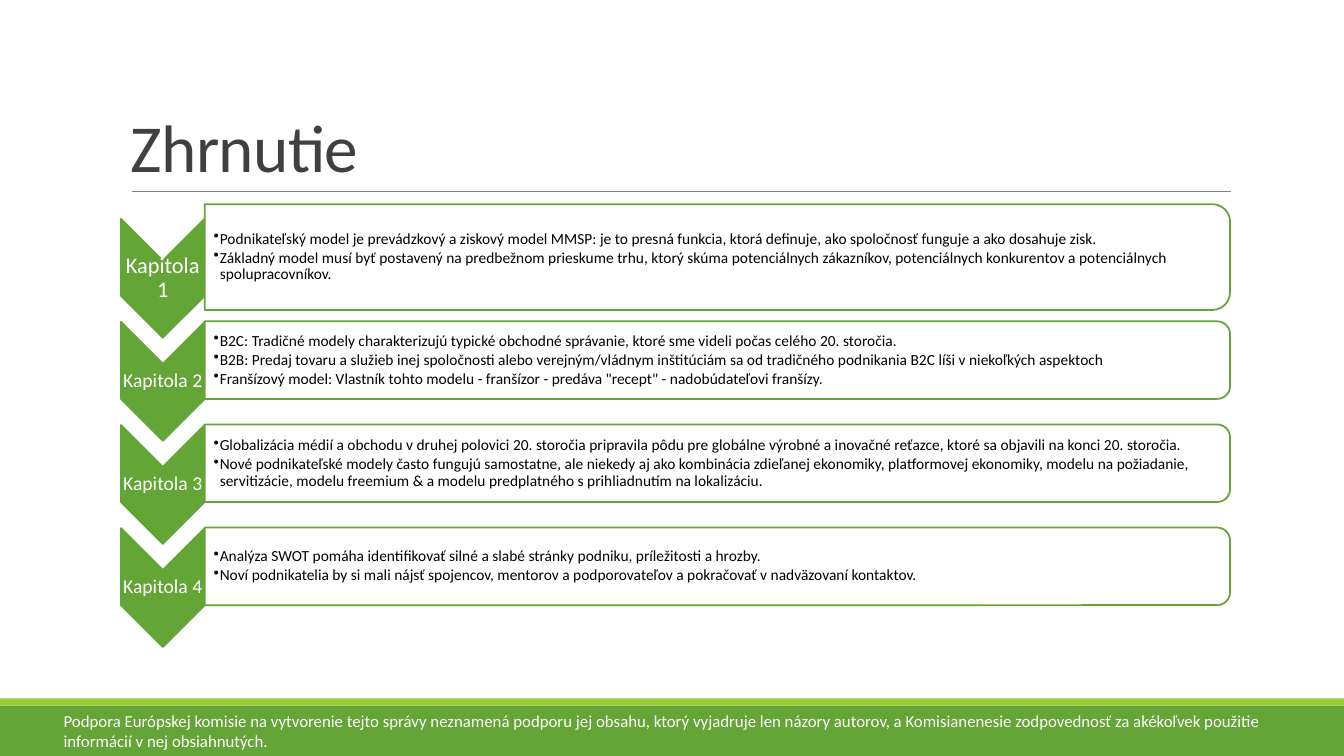
from lxml import etree
from pptx import Presentation
from pptx.dml.color import RGBColor
from pptx.enum.shapes import MSO_CONNECTOR, MSO_SHAPE
from pptx.enum.text import MSO_ANCHOR, PP_ALIGN
from pptx.oxml.ns import qn
from pptx.util import Inches, Pt

GREEN = RGBColor(0x63, 0xA5, 0x37)
LIME = RGBColor(0x99, 0xCB, 0x38)
GRAY = RGBColor(0x80, 0x80, 0x80)
DARK = RGBColor(0x40, 0x40, 0x40)
WHITE = RGBColor(0xFF, 0xFF, 0xFF)
BLACK = RGBColor(0, 0, 0)
RECT, CHEVRON, ROUND = (
    MSO_SHAPE.RECTANGLE, MSO_SHAPE.CHEVRON, MSO_SHAPE.ROUND_2_SAME_RECTANGLE)
STRAIGHT = MSO_CONNECTOR.STRAIGHT
TOP, MIDDLE, BOTTOM = MSO_ANCHOR.TOP, MSO_ANCHOR.MIDDLE, MSO_ANCHOR.BOTTOM
LEFT, CENTER = PP_ALIGN.LEFT, PP_ALIGN.CENTER

WIDTH, HEIGHT = 13.33, 7.5
PITCH = 1.023
TAB = 0.83
ARROW = 1.18
DROP = 0.21

CHAPTERS = [
    ("Kapitola 1", 16, 1.05, [
        "Podnikateľský model je prevádzkový a ziskový model MMSP: je to presná funkcia, "
        "ktorá definuje, ako spoločnosť funguje a ako dosahuje zisk.",
        "Základný model musí byť postavený na predbežnom prieskume trhu, ktorý skúma "
        "potenciálnych zákazníkov, potenciálnych konkurentov a potenciálnych "
        "spolupracovníkov."]),
    ("Kapitola 2", 14, 0.77, [
        "B2C: Tradičné modely charakterizujú typické obchodné správanie, ktoré sme videli "
        "počas celého 20. storočia.",
        "B2B: Predaj tovaru a služieb inej spoločnosti alebo verejným/vládnym inštitúciám "
        "sa od tradičného podnikania B2C líši v niekoľkých aspektoch",
        "Franšízový model: Vlastník tohto modelu - franšízor - predáva \"recept\" - "
        "nadobúdateľovi franšízy."]),
    ("Kapitola 3", 14, 0.77, [
        "Globalizácia médií a obchodu v druhej polovici 20. storočia pripravila pôdu pre "
        "globálne výrobné a inovačné reťazce, ktoré sa objavili na konci 20. storočia.",
        "Nové podnikateľské modely často fungujú samostatne, ale niekedy aj ako kombinácia "
        "zdieľanej ekonomiky, platformovej ekonomiky, modelu na požiadanie, servitizácie, "
        "modelu freemium & a modelu predplatného s prihliadnutím na lokalizáciu."]),
    ("Kapitola 4", 14, 0.77, [
        "Analýza SWOT pomáha identifikovať silné a slabé stránky podniku, príležitosti "
        "a hrozby.",
        "Noví podnikatelia by si mali nájsť spojencov, mentorov a podporovateľov "
        "a pokračovať v nadväzovaní kontaktov."]),
]
NOTICE = (
    "Podpora Európskej komisie na vytvorenie tejto správy neznamená podporu jej obsahu, "
    "ktorý vyjadruje len názory autorov, a Komisianenesie zodpovednosť za akékoľvek "
    "použitie informácií v nej obsiahnutých.")


def add_form(slide, kind, box, fill, line=None, turn=0):
    """Add a filled preset shape."""
    form = slide.shapes.add_shape(kind, *map(Inches, box))
    form.shadow.inherit = False
    form.rotation = turn
    form.fill.solid()
    form.fill.fore_color.rgb = fill
    if line is None:
        form.line.fill.background()
    else:
        form.line.color.rgb = line
        form.line.width = Pt(1.25)
    return form


def add_text(slide, box, lines, size, color, anchor=MIDDLE, align=LEFT,
             space=0.9, pads=(0.01, 0.01, 0.01, 0.01)):
    """Add a wrapped text box and return its paragraphs."""
    frame = slide.shapes.add_textbox(*map(Inches, box)).text_frame
    frame.word_wrap = True
    frame.vertical_anchor = anchor
    (frame.margin_left, frame.margin_top,
     frame.margin_right, frame.margin_bottom) = map(Inches, pads)
    frame.text = "\n".join(lines)
    for par in frame.paragraphs:
        par.alignment = align
        par.line_spacing = space
        par.font.name = "Calibri"
        par.font.size = Pt(size)
        par.font.color.rgb = color
    return frame.paragraphs


def add_bullet(par):
    """Give a paragraph a hanging bullet."""
    par.space_after = Pt(1.65)
    props = par._p.get_or_add_pPr()
    props.set("marL", str(Inches(0.06)))
    props.set("indent", str(-Inches(0.06)))
    mark = etree.Element(qn("a:buChar"), char="•")
    props.find(qn("a:defRPr")).addprevious(mark)


def add_title(slide, left, top, width, height):
    """Draw the heading and the rule below it."""
    pars = add_text(slide, (left, top, width, height), ["Zhrnutie"], 48, DARK,
                    BOTTOM, space=0.85, pads=(0.1, 0.05, 0.1, 0.05))
    pars[0].runs[0]._r.get_or_add_rPr().set("spc", "-50")
    base = Inches(top + height)
    rule = slide.shapes.add_connector(
        STRAIGHT, Inches(left + 0.11), base, Inches(left + width + 0.01), base)
    rule.line.color.rgb = GRAY
    rule.line.width = Pt(0.5)
    etree.SubElement(rule._element.spPr, qn("a:effectLst"))


def add_row(slide, left, mid, width, chapter):
    """Draw one chapter: a down chevron and its panel of points."""
    name, size, tall, points = chapter
    low = mid + DROP
    add_form(slide, CHEVRON,
             (left + (TAB - ARROW) / 2, low - TAB / 2, ARROW, TAB), GREEN, GREEN, 90)
    add_text(slide, (left, low - 0.175, TAB, 0.35), [name], size, WHITE, align=CENTER)
    start, wide = left + TAB, width - TAB
    add_form(slide, ROUND,
             (start + (wide - tall) / 2, mid - wide / 2, tall, wide), WHITE, GREEN, 90)
    inner = tall - 0.09
    pars = add_text(slide, (start, mid - inner / 2, wide - 0.04, inner), points, 11,
                    BLACK, pads=(0.09, 0.01, 0.01, 0.01))
    for par in pars:
        add_bullet(par)


def add_footer(slide, top, height):
    """Draw the bottom bands with the notice."""
    add_form(slide, RECT, (0, top, WIDTH, height), GREEN)
    add_form(slide, RECT, (0, top - 0.07, WIDTH, 0.07), LIME)
    add_text(slide, (0.04 * WIDTH, top, 12.3, height), [NOTICE], 12, WHITE, TOP,
             space=1, pads=(0.1, 0.05, 0.1, 0.05))


def main():
    """Build and save the slide."""
    deck = Presentation()
    deck.slide_width, deck.slide_height = Inches(WIDTH), Inches(HEIGHT)
    slide = deck.slides.add_slide(deck.slide_layouts[6])
    add_title(slide, 1.2, 0.31, 11, 1.59)
    for row, chapter in enumerate(CHAPTERS):
        add_row(slide, 1.2, 2.55 + row * PITCH, 11, chapter)
    add_footer(slide, 7, 0.5)
    deck.save("out.pptx")


if __name__ == "__main__":
    main()
